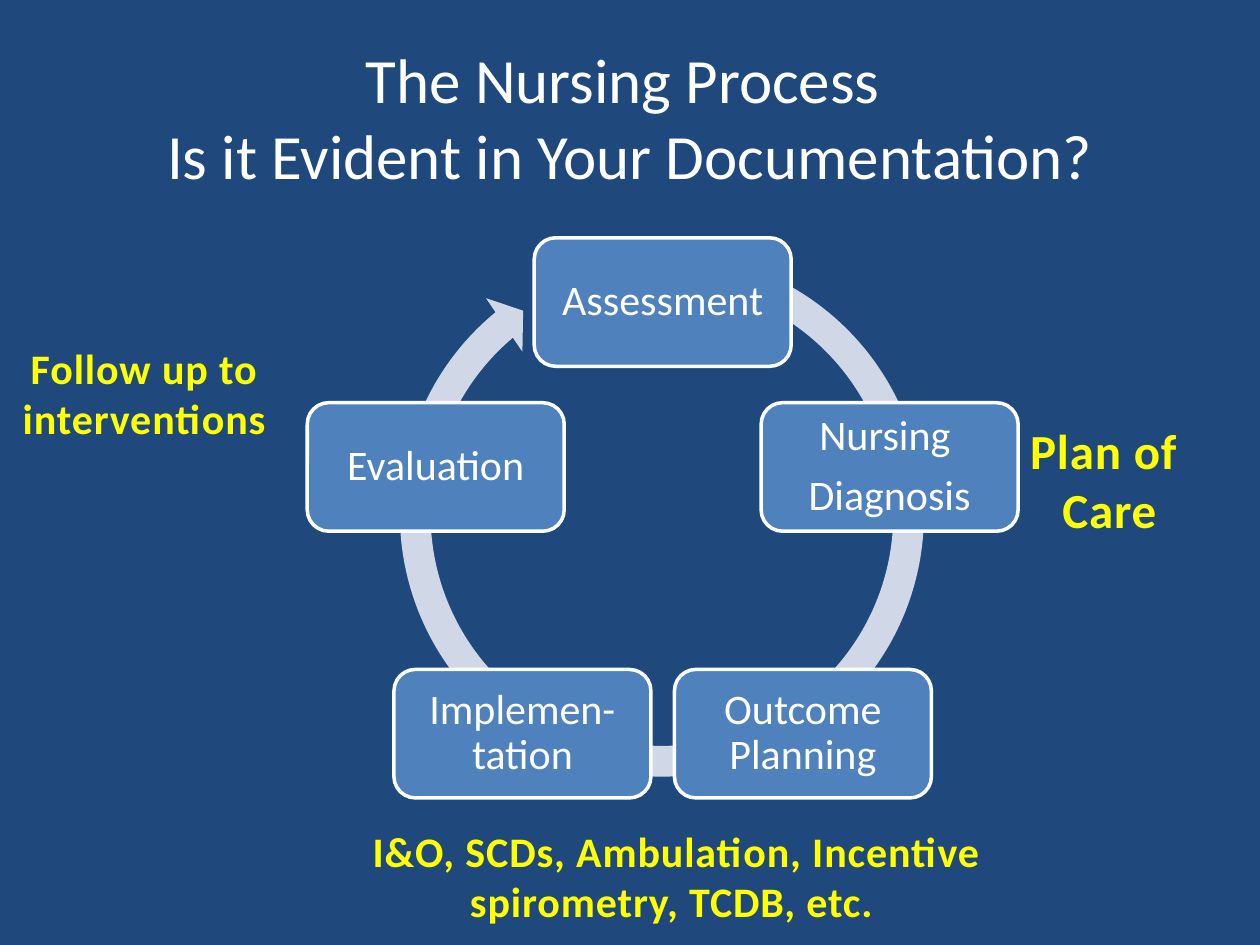
"""Build the nursing process cycle slide."""
from dataclasses import dataclass
from math import cos, pi, sin

from pptx import Presentation
from pptx.dml.color import RGBColor as Rgb
from pptx.enum.shapes import MSO_SHAPE as Kind
from pptx.enum.text import MSO_ANCHOR as Anchor, PP_ALIGN as Align
from pptx.util import Cm, Pt

NAVY, BLUE, PALE = "1F497D", "4F81BD", "D0D8E8"
WHITE, YELLOW = "FFFFFF", "FFFF00"
HUB_X, HUB_Y, RADIUS = 13.36, 10.9, 4.81
STEP_W, STEP_H = 5.18, 2.59
BEND = (0.055, 3.307, 138.152, 173.621, 0.058)
STEPS = ("Assessment", "Nursing \nDiagnosis", "Outcome Planning",
         "Implemen-tation", "Evaluation")
STEP_STYLE = {"line_spacing": 0.9, "space_after": Pt(8.4)}


@dataclass
class Note:
    text: str
    left: float
    top: float
    width: float
    height: float
    size: int = 24
    color: str = YELLOW
    bold: bool = True
    track: int = 50
    anchor: Anchor = Anchor.TOP


NOTES = (
    Note("The Nursing Process \vIs it Evident in Your Documentation?",
         1.27, 0.76, 22.86, 3.18, 36, WHITE, False, 0, Anchor.MIDDLE),
    Note("Plan of \nCare", 19.33, 8.36, 6.07, 2.64, 28),
    Note("I&O, SCDs, Ambulation, Incentive spirometry, TCDB, etc. ",
         6.99, 16.51, 13.31, 2.31),
    Note("Follow up to interventions", 0, 6.78, 5.82, 2.31),
)


def paint(part, color: str) -> None:
    """Give a fill one solid colour."""
    part.fill.solid()
    part.fill.fore_color.rgb = Rgb.from_string(color)


def write(frame, text: str, size: int, color: str, bold: bool = False,
          track: int = 0, style: dict | None = None) -> None:
    """Write centred text with one font throughout."""
    frame.word_wrap = True
    frame.text = text
    font = {"name": "Calibri", "size": Pt(size), "bold": bold}
    for para in frame.paragraphs:
        for key, val in {"alignment": Align.CENTER, **(style or {})}.items():
            setattr(para, key, val)
        for run in para.runs:
            for key, val in font.items():
                setattr(run.font, key, val)
            run.font.color.rgb = Rgb.from_string(color)
            if track:
                run._r.get_or_add_rPr().set("spc", str(track))


def draw_ring(slide) -> None:
    """Draw the circular arrow behind the steps."""
    ring = slide.shapes.add_shape(
        Kind.CIRCULAR_ARROW, Cm(7.72), Cm(4.75), Cm(11.25), Cm(11.25))
    for i, val in enumerate(BEND):
        ring.adjustments[i] = val
    ring.shadow.inherit = False
    paint(ring, PALE)
    ring.line.fill.background()


def draw_step(slide, text: str, turn: float) -> None:
    """Draw one step at an angle clockwise from the top."""
    left = HUB_X + RADIUS * sin(turn) - STEP_W / 2
    top = HUB_Y - RADIUS * cos(turn) - STEP_H / 2
    box = slide.shapes.add_shape(
        Kind.ROUNDED_RECTANGLE, Cm(left), Cm(top), Cm(STEP_W), Cm(STEP_H))
    box.shadow.inherit = False
    paint(box, BLUE)
    paint(box.line, WHITE)
    box.line.width = Pt(2)
    frame = box.text_frame
    for side in ("left", "top", "right", "bottom"):
        setattr(frame, f"margin_{side}", Cm(0.25))
    frame.vertical_anchor = Anchor.MIDDLE
    write(frame, text, 24, WHITE, style=STEP_STYLE)


def draw_note(slide, note: Note) -> None:
    """Draw one free text box."""
    box = slide.shapes.add_textbox(
        Cm(note.left), Cm(note.top), Cm(note.width), Cm(note.height))
    box.text_frame.vertical_anchor = note.anchor
    write(box.text_frame, note.text, note.size, note.color,
          note.bold, note.track)


def main() -> None:
    """Build and save the slide."""
    deck = Presentation()
    deck.slide_width, deck.slide_height = Cm(25.4), Cm(19.05)
    slide = deck.slides.add_slide(deck.slide_layouts[6])
    paint(slide.background, NAVY)
    draw_ring(slide)
    for i, text in enumerate(STEPS):
        draw_step(slide, text, 2 * pi * i / len(STEPS))
    for note in NOTES:
        draw_note(slide, note)
    deck.save("out.pptx")


if __name__ == "__main__":
    main()
